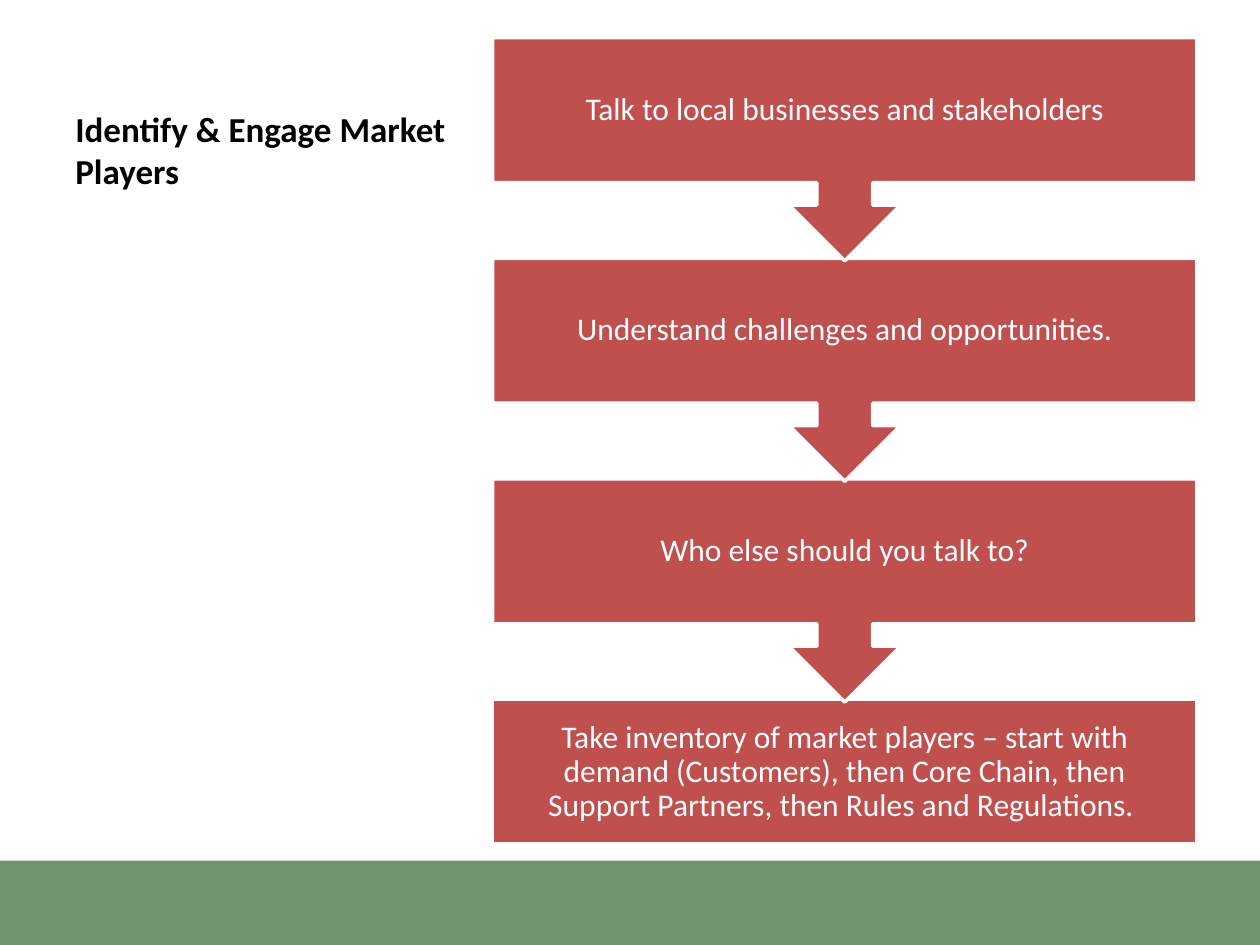
from pptx import Presentation
from pptx.dml.color import RGBColor
from pptx.enum.shapes import MSO_SHAPE as Shape
from pptx.enum.text import MSO_ANCHOR as Anchor, PP_ALIGN as Align
from pptx.util import Cm, Pt

COLORS = {"box": "C0504D", "band": "70946B", "white": "FFFFFF", "black": "000000"}
FONT = "Calibri"
STEPS = [
    "Talk to local businesses and stakeholders",
    "Understand challenges and opportunities.",
    "Who else should you talk to?",
    "Take inventory of market players – start with demand (Customers), "
    "then Core Chain, then Support Partners, then Rules and Regulations. ",
]


def color(name):
    return RGBColor.from_string(COLORS[name])


def write(shape, text, size, tint, bold=False):
    """Fill a shape's text frame with one styled paragraph and return it."""
    shape.text_frame.word_wrap = True
    para = shape.text_frame.paragraphs[0]
    para.text = text
    font = para.font
    font.name, font.size, font.bold = FONT, Pt(size), bold
    font.color.rgb = color(tint)
    return para


def add_block(slide, kind, box, fill):
    block = slide.shapes.add_shape(kind, *map(Cm, box))
    block.shadow.inherit = False
    block.fill.solid()
    block.fill.fore_color.rgb = color(fill)
    block.line.fill.background()
    return block


def add_title(slide, box, text):
    title = slide.shapes.add_textbox(*map(Cm, box))
    write(title, text, 20, "black", bold=True)
    title.text_frame.vertical_anchor = Anchor.BOTTOM


def add_flow(slide, box, steps):
    """Stack the steps evenly; each but the last points down to the next."""
    left, top, width, height = box
    body, reach = 2.92, 4.5
    pitch = (height - body) / (len(steps) - 1)
    last = len(steps) - 1
    # Bottom step first, so that each arrow tip lies over the step below it
    for i, text in reversed(list(enumerate(steps))):
        kind = Shape.RECTANGLE if i == last else Shape.DOWN_ARROW_CALLOUT
        tall = body if i == last else reach
        step = add_block(slide, kind, (left, top + i * pitch, width, tall), "box")
        step.line.color.rgb = color("white")
        step.line.width = Pt(2)
        frame = step.text_frame
        frame.margin_left = frame.margin_right = Cm(0.36)
        frame.margin_top = frame.margin_bottom = Cm(0.36)
        frame.vertical_anchor = Anchor.MIDDLE
        para = write(step, text, 18, "white")
        para.alignment = Align.CENTER
        para.line_spacing = 0.9


def main():
    deck = Presentation()
    deck.slide_width, deck.slide_height = Cm(25.4), Cm(19.05)
    slide = deck.slides.add_slide(deck.slide_layouts[6])
    add_block(slide, Shape.RECTANGLE, (0, 17.35, 25.4, 1.7), "band")
    add_title(slide, (1.27, 0.76, 8.36, 3.23), "Identify & Engage Market Players")
    add_flow(slide, (9.93, 0.76, 14.2, 16.26), STEPS)
    deck.save("out.pptx")


if __name__ == "__main__":
    main()
